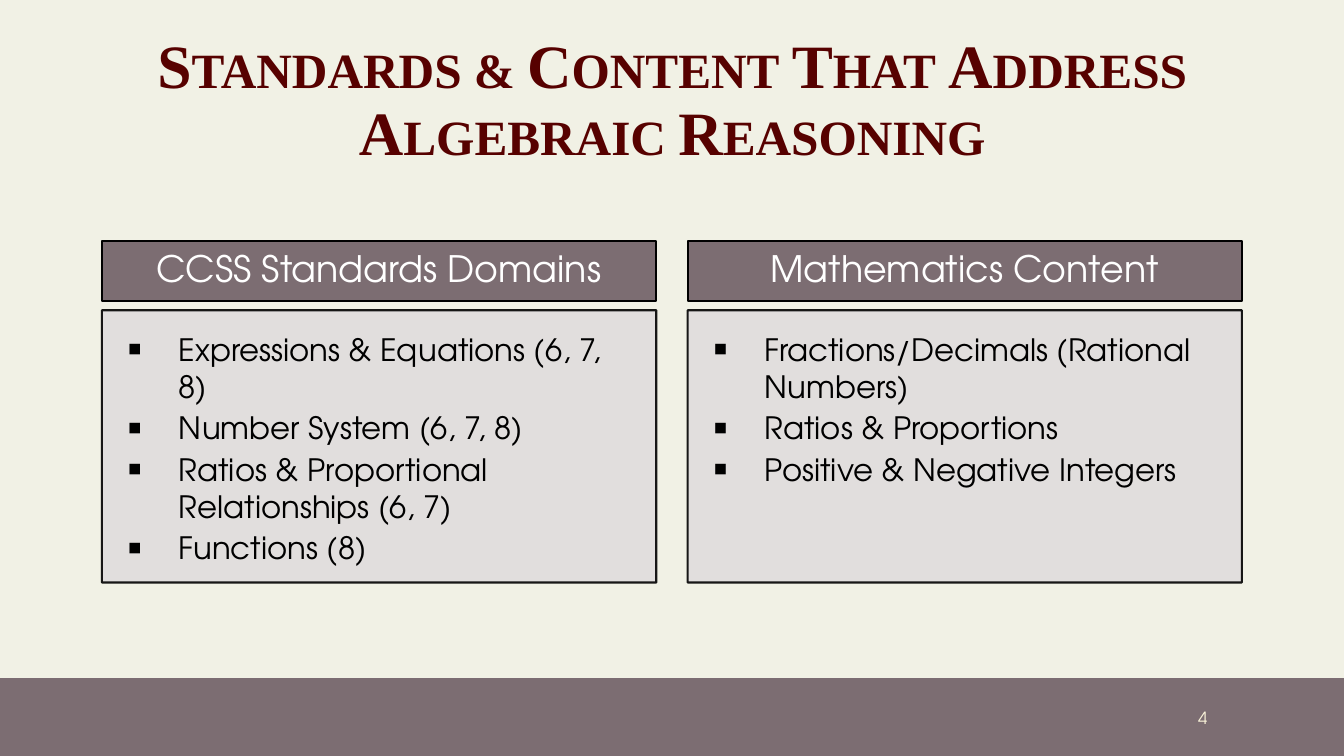
from dataclasses import dataclass

from lxml.etree import SubElement
from pptx import Presentation
from pptx.dml.color import RGBColor
from pptx.enum.shapes import MSO_SHAPE
from pptx.enum.text import MSO_ANCHOR, PP_ALIGN
from pptx.oxml import parse_xml
from pptx.oxml.ns import nsdecls, qn
from pptx.shapes.autoshape import Shape
from pptx.slide import Slide
from pptx.text.text import TextFrame, _Paragraph, _Run
from pptx.util import Cm, Pt


@dataclass(frozen=True)
class Theme:
    paper: str = "F1F1E5"
    mauve: str = "7C6D72"
    panel: str = "E0DCDD"
    maroon: str = "570100"
    cream: str = "FAF3D9"
    white: str = "FFFFFF"
    black: str = "000000"
    serif: str = "Times New Roman"
    sans: str = "TeX Gyre Adventor"
    title: int = 44
    head: int = 26
    body: int = 22
    number: int = 12


@dataclass(frozen=True)
class Box:
    left: float
    top: float
    width: float
    height: float

    def lengths(self) -> tuple[Cm, Cm, Cm, Cm]:
        return Cm(self.left), Cm(self.top), Cm(self.width), Cm(self.height)


@dataclass(frozen=True)
class Column:
    head: str
    items: tuple[str, ...]


THEME = Theme()
WIDTH, HEIGHT = 33.87, 19.05
LEFT, STEP, SPAN = 2.57, 14.76, 13.97
COLUMNS = (
    Column("CCSS Standards Domains", (
        "Expressions & Equations (6, 7, 8)",
        "Number System (6, 7, 8)",
        "Ratios & Proportional Relationships (6, 7)",
        "Functions (8)",
    )),
    Column("Mathematics Content", (
        "Fractions/Decimals (Rational Numbers)",
        "Ratios & Proportions",
        "Positive & Negative Integers",
    )),
)


def add_run(para: _Paragraph, text: str, size: int, color: str,
            face: str = THEME.sans) -> _Run:
    run = para.add_run()
    run.text = text
    run.font.size = Pt(size)
    run.font.name = face
    run.font.color.rgb = RGBColor.from_string(color)
    return run


def add_rect(slide: Slide, box: Box, fill: str, line: bool = True) -> Shape:
    rect = slide.shapes.add_shape(MSO_SHAPE.RECTANGLE, *box.lengths())
    rect.shadow.inherit = False
    rect.fill.solid()
    rect.fill.fore_color.rgb = RGBColor.from_string(fill)
    if line:
        rect.line.color.rgb = RGBColor.from_string(THEME.black)
        rect.line.width = Pt(1.5)
    else:
        rect.line.fill.background()
    return rect


def add_label(slide: Slide, box: Box, align: PP_ALIGN) -> _Paragraph:
    frame = slide.shapes.add_textbox(*box.lengths()).text_frame
    frame.word_wrap = True
    frame.vertical_anchor = MSO_ANCHOR.MIDDLE
    para = frame.paragraphs[0]
    para.alignment = align
    return para


def set_insets(frame: TextFrame, left: float, top: float,
               right: float, bottom: float) -> None:
    frame.word_wrap = True
    frame.margin_left, frame.margin_top = Cm(left), Cm(top)
    frame.margin_right, frame.margin_bottom = Cm(right), Cm(bottom)


def add_bullet(para: _Paragraph) -> None:
    props = para._p.get_or_add_pPr()
    props.set("marL", str(Cm(1.3)))
    props.set("indent", str(-Cm(1.3)))
    SubElement(props, qn("a:buSzPct"), val="90000")
    SubElement(props, qn("a:buFont"), typeface=THEME.sans)
    SubElement(props, qn("a:buChar"), char="▪")


def add_title(slide: Slide) -> None:
    para = add_label(slide, Box(1.14, 0.69, 31.6, 3.76), PP_ALIGN.CENTER)
    para.line_spacing = 0.9
    run = add_run(para, "Standards & Content That Address Algebraic Reasoning",
                  THEME.title, THEME.maroon, THEME.serif)
    run.font.bold = True
    props = run._r.get_or_add_rPr()
    props.set("cap", "small")
    # Soft shadow behind the letters
    props.find(qn("a:solidFill")).addnext(parse_xml(
        f'<a:effectLst {nsdecls("a")}><a:outerShdw blurRad="38100" dist="38100" '
        'dir="2700000" algn="tl"><a:srgbClr val="000000"><a:alpha val="43000"/>'
        '</a:srgbClr></a:outerShdw></a:effectLst>'))


def add_column(slide: Slide, left: float, column: Column) -> None:
    # Heading bar
    head = add_rect(slide, Box(left, 6.07, SPAN, 1.52), THEME.mauve)
    set_insets(head.text_frame, 0.51, 0.3, 0.51, 0.3)
    head.text_frame.vertical_anchor = MSO_ANCHOR.MIDDLE
    para = head.text_frame.paragraphs[0]
    para.alignment = PP_ALIGN.CENTER
    para.line_spacing = 0.9
    add_run(para, column.head, THEME.head, THEME.white)

    # Translucent panel with its list
    panel = add_rect(slide, Box(left, 7.82, SPAN, 6.86), THEME.panel)
    for color in panel._element.spPr.iter(qn("a:srgbClr")):
        SubElement(color, qn("a:alpha"), val="90000")
    frame = panel.text_frame
    set_insets(frame, 0.64, 0.51, 0.51, 0.51)
    frame.vertical_anchor = MSO_ANCHOR.TOP
    for index, item in enumerate(column.items):
        para = frame.add_paragraph() if index else frame.paragraphs[0]
        add_bullet(para)
        para.alignment = PP_ALIGN.LEFT
        para.space_after = Pt(3.3)
        add_run(para, item, THEME.body, THEME.black)


def main() -> None:
    deck = Presentation()
    deck.slide_width, deck.slide_height = Cm(WIDTH), Cm(HEIGHT)
    slide = deck.slides.add_slide(deck.slide_layouts[6])
    slide.background.fill.solid()
    slide.background.fill.fore_color.rgb = RGBColor.from_string(THEME.paper)

    # Footer band and slide number
    add_rect(slide, Box(0, 17.09, WIDTH, 1.96), THEME.mauve, line=False)
    para = add_label(slide, Box(25.93, 17.58, 4.75, 1.02), PP_ALIGN.RIGHT)
    add_run(para, "4", THEME.number, THEME.cream)

    # Title and columns
    add_title(slide)
    for index, column in enumerate(COLUMNS):
        add_column(slide, LEFT + index * STEP, column)
    deck.save("out.pptx")


if __name__ == "__main__":
    main()
